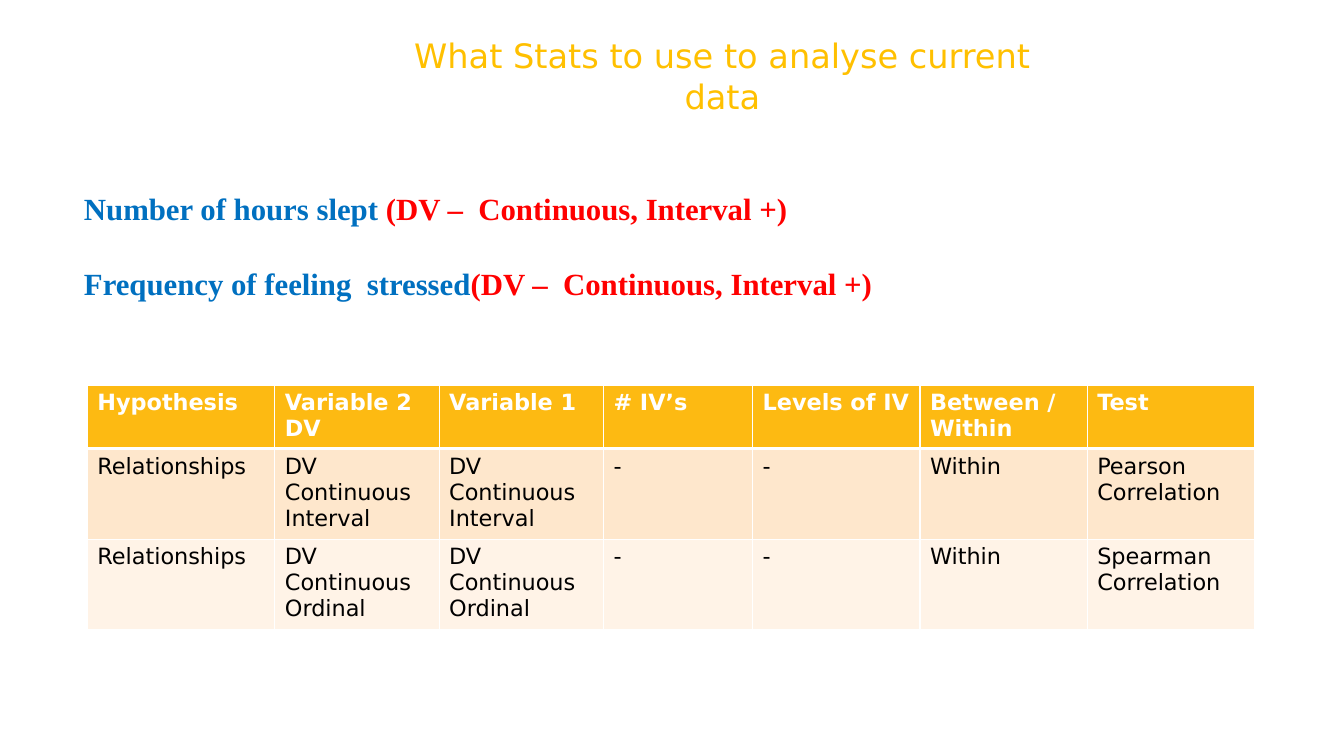
from dataclasses import dataclass

from lxml.etree import SubElement
from pptx import Presentation
from pptx.dml.color import RGBColor
from pptx.enum.text import MSO_ANCHOR, MSO_AUTO_SIZE, PP_ALIGN
from pptx.oxml.ns import qn
from pptx.util import Emu, Inches, Pt

WHITE = RGBColor(0xFF, 0xFF, 0xFF)
BLACK = RGBColor(0x00, 0x00, 0x00)
GOLD = RGBColor(0xFF, 0xC0, 0x00)
BLUE = RGBColor(0x00, 0x70, 0xC0)
RED = RGBColor(0xFF, 0x00, 0x00)
HEADER_AMBER = RGBColor(0xFD, 0xBA, 0x12)
PEACH = RGBColor(0xFE, 0xE7, 0xCC)
CREAM = RGBColor(0xFF, 0xF3, 0xE7)

SANS = "DejaVu Sans"
SERIF = "Times New Roman"

SLIDE_WIDTH, SLIDE_HEIGHT = Inches(13.33), Inches(7.5)
GRID_COLUMNS, GRID_ROWS = 40, 30


@dataclass(frozen=True)
class Area:
    """A rectangle in grid columns and rows."""
    left: float
    top: float
    width: float
    height: float


@dataclass(frozen=True)
class Measure:
    name: str
    role: str


@dataclass(frozen=True)
class TestRow:
    cells: tuple[str, ...]
    height: float
    fill: RGBColor
    ink: RGBColor = BLACK
    bold: bool = False
    rule_below: float = 1


TITLE_AREA = Area(11.5, 1.2, 20, 3.64)
MEASURES_AREA = Area(2.2, 7.32, 36.45, 4.84)
TABLE_LEFT, TABLE_TOP = 2.6, 15.28
TABLE_COLUMNS = (5.58, 4.89, 4.89, 4.44, 4.98, 4.98, 4.98)

MEASURES = (
    Measure("Number of hours slept ", "(DV –  Continuous, Interval +)"),
    Measure("Frequency of feeling  stressed", "(DV –  Continuous, Interval +)"),
)

INTERVAL = "DV\nContinuous\nInterval"
ORDINAL = "DV\nContinuous\nOrdinal"
TEST_ROWS = (
    TestRow(("Hypothesis", "Variable 2\nDV", "Variable 1", "# IV’s", "Levels of IV",
             "Between / Within", "Test"), 2.52, HEADER_AMBER, WHITE, True, 3),
    TestRow(("Relationships", INTERVAL, INTERVAL, "-", "-", "Within",
             "Pearson Correlation"), 3.6, PEACH),
    TestRow(("Relationships", ORDINAL, ORDINAL, "-", "-", "Within",
             "Spearman Correlation"), 3.6, CREAM),
)


def across(columns: float) -> Emu:
    return Emu(round(SLIDE_WIDTH * columns / GRID_COLUMNS))


def down(rows: float) -> Emu:
    return Emu(round(SLIDE_HEIGHT * rows / GRID_ROWS))


def format_font(font, color: RGBColor, **values) -> None:
    for attribute, value in values.items():
        setattr(font, attribute, value)
    font.color.rgb = color


def prepare(placeholder, area: Area):
    """Move a placeholder to its area and return its top-anchored text frame."""
    places = {"left": across(area.left), "top": down(area.top),
              "width": across(area.width), "height": down(area.height)}
    for attribute, value in places.items():
        setattr(placeholder, attribute, value)
    frame = placeholder.text_frame
    settings = {"word_wrap": True, "auto_size": MSO_AUTO_SIZE.NONE,
                "vertical_anchor": MSO_ANCHOR.TOP}
    for attribute, value in settings.items():
        setattr(frame, attribute, value)
    return frame


def write_title(placeholder) -> None:
    heading = prepare(placeholder, TITLE_AREA).paragraphs[0]
    heading.alignment = PP_ALIGN.CENTER
    run = heading.add_run()
    run.text = "What Stats to use to analyse current data"
    format_font(run.font, GOLD, name=SANS, size=Pt(24))


def write_measures(placeholder) -> None:
    frame = prepare(placeholder, MEASURES_AREA)
    for index, measure in enumerate(MEASURES):
        line = frame.paragraphs[0] if index == 0 else frame.add_paragraph()
        properties = line._p.get_or_add_pPr()
        properties.set("marL", "0")
        properties.set("indent", "0")
        SubElement(properties, qn("a:buNone"))
        line.space_before = Pt(27.5 if index else 0)
        for words, color in ((measure.name, BLUE), (measure.role, RED)):
            run = line.add_run()
            run.text = words
            format_font(run.font, color, name=SERIF, size=Pt(22), bold=True)


def rule_cell(cell, above: float, below: float) -> None:
    """Give a cell white borders; above and below are line widths in points."""
    properties = cell._tc.get_or_add_tcPr()
    for side, width in (("lnL", 1), ("lnR", 1), ("lnT", above), ("lnB", below)):
        border = SubElement(properties, qn(f"a:{side}"), w=str(Pt(width)))
        fill = SubElement(border, qn("a:solidFill"))
        SubElement(fill, qn("a:srgbClr"), val=str(WHITE))


def draw_tests(slide) -> None:
    table = slide.shapes.add_table(
        len(TEST_ROWS), len(TABLE_COLUMNS), across(TABLE_LEFT), down(TABLE_TOP),
        across(sum(TABLE_COLUMNS)), down(sum(row.height for row in TEST_ROWS))).table
    for column, width in zip(table.columns, TABLE_COLUMNS):
        column.width = across(width)
    above = 1
    for table_row, row in zip(table.rows, TEST_ROWS):
        table_row.height = down(row.height)
        for cell, words in zip(table_row.cells, row.cells):
            rule_cell(cell, above, row.rule_below)
            cell.fill.solid()
            cell.fill.fore_color.rgb = row.fill
            cell.text = words
            for paragraph in cell.text_frame.paragraphs:
                for run in paragraph.runs:
                    format_font(run.font, row.ink, name=SANS, size=Pt(16), bold=row.bold)
        above = row.rule_below


def main() -> None:
    presentation = Presentation()
    presentation.slide_width, presentation.slide_height = SLIDE_WIDTH, SLIDE_HEIGHT
    slide = presentation.slides.add_slide(presentation.slide_layouts[1])
    write_title(slide.shapes.title)
    write_measures(slide.placeholders[1])
    draw_tests(slide)
    presentation.save("out.pptx")


if __name__ == "__main__":
    main()
